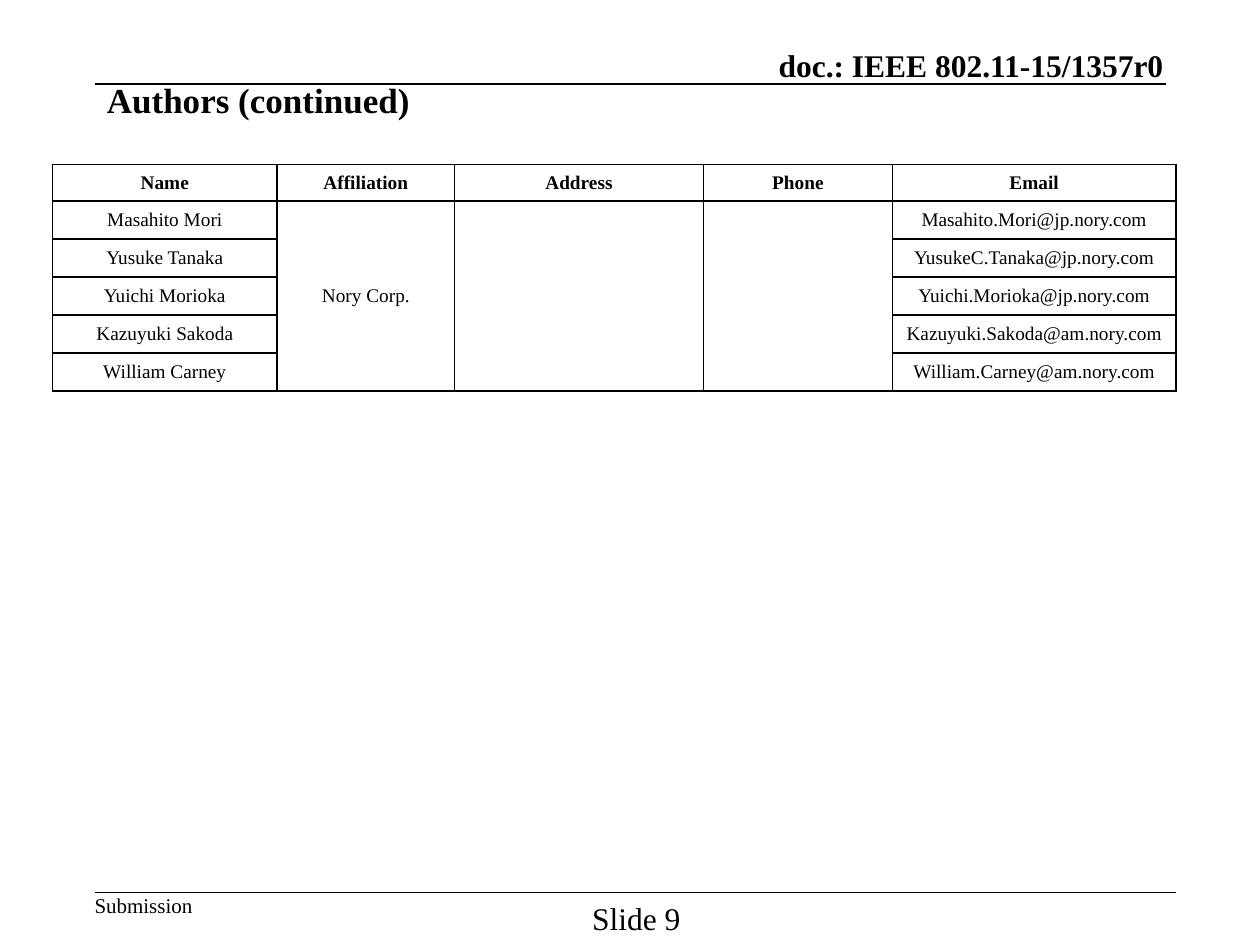
from lxml import etree
from pptx import Presentation
from pptx.dml.color import RGBColor
from pptx.enum.shapes import MSO_CONNECTOR
from pptx.enum.text import MSO_ANCHOR, PP_ALIGN
from pptx.oxml.ns import qn
from pptx.util import Pt

BLACK = RGBColor(0, 0, 0)
WHITE = RGBColor(255, 255, 255)
FONT = "Times New Roman"
LEFT, CENTER, RIGHT = PP_ALIGN.LEFT, PP_ALIGN.CENTER, PP_ALIGN.RIGHT
TOP, MIDDLE, BOTTOM = MSO_ANCHOR.TOP, MSO_ANCHOR.MIDDLE, MSO_ANCHOR.BOTTOM
STRAIGHT = MSO_CONNECTOR.STRAIGHT


def write_text(text_frame, text, size, bold=False, align=LEFT):
    paragraph = text_frame.paragraphs[0]
    paragraph.alignment = align
    run = paragraph.add_run()
    run.text = text
    run.font.name = FONT
    run.font.size = Pt(size)
    run.font.bold = bold
    run.font.color.rgb = BLACK


presentation = Presentation()
presentation.slide_width, presentation.slide_height = Pt(720), Pt(540)
slide = presentation.slides.add_slide(presentation.slide_layouts[6])

labels = [
    ("doc.: IEEE 802.11-15/1357r0", (406.4, 26.4, 258.5, 21.6), 18, True, RIGHT, BOTTOM, (0, 0), False),
    ("Submission", (54, 510, 56.2, 14.4), 12, False, LEFT, TOP, (0, 0), False),
    ("Slide 9", (333.6, 513.8, 60, 21.6), 18, False, CENTER, TOP, (0, 0), False),
    ("Authors (continued)", (54, 47.8, 612, 18), 20, True, LEFT, MIDDLE, (7.2, 3.6), True),
]
for text, box, size, bold, align, anchor, (side, edge), wrap in labels:
    text_frame = slide.shapes.add_textbox(*map(Pt, box)).text_frame
    text_frame.word_wrap = wrap
    text_frame.vertical_anchor = anchor
    text_frame.margin_left = text_frame.margin_right = Pt(side)
    text_frame.margin_top = text_frame.margin_bottom = Pt(edge)
    write_text(text_frame, text, size, bold, align)

for right, y in [(666, 48), (672, 510)]:
    rule = slide.shapes.add_connector(STRAIGHT, Pt(54), Pt(y), Pt(right), Pt(y))
    rule.line.color.rgb = BLACK
    rule.line.width = Pt(1)
    etree.SubElement(rule.element.spPr, qn("a:effectLst"))

headings = ["Name", "Affiliation", "Address", "Phone", "Email"]
authors = [
    ("Masahito Mori", "Masahito.Mori@jp.nory.com"),
    ("Yusuke Tanaka", "YusukeC.Tanaka@jp.nory.com"),
    ("Yuichi Morioka", "Yuichi.Morioka@jp.nory.com"),
    ("Kazuyuki Sakoda", "Kazuyuki.Sakoda@am.nory.com"),
    ("William Carney", "William.Carney@am.nory.com"),
]
rows = [headings] + [[name, "", "", "", email] for name, email in authors]
rows[1][1] = "Nory Corp."
column_widths = [128.4, 101.4, 142.2, 108, 162]
row_heights = [21] + [21.7] * len(authors)

table = slide.shapes.add_table(
    len(rows), len(headings), Pt(30), Pt(93.9), Pt(sum(column_widths)), Pt(sum(row_heights))
).table
for column, width in zip(table.columns, column_widths):
    column.width = Pt(width)
for row, height in zip(table.rows, row_heights):
    row.height = Pt(height)

for row_index, row in enumerate(rows):
    is_heading = row_index == 0
    for column_index, text in enumerate(row):
        cell = table.cell(row_index, column_index)
        cell.vertical_anchor = MIDDLE
        if not is_heading:
            cell.margin_left = cell.margin_right = Pt(5)
            cell.margin_top = cell.margin_bottom = 0
        cell_properties = cell._tc.get_or_add_tcPr()
        for side in ("a:lnL", "a:lnR", "a:lnT", "a:lnB"):
            border = etree.SubElement(cell_properties, qn(side), w=str(Pt(1)))
            border_fill = etree.SubElement(border, qn("a:solidFill"))
            etree.SubElement(border_fill, qn("a:srgbClr"), val=str(BLACK))
        cell.fill.solid()
        cell.fill.fore_color.rgb = WHITE
        if text:
            write_text(cell.text_frame, text, 11, is_heading, CENTER)

for column_index in (1, 2, 3):
    table.cell(1, column_index).merge(table.cell(len(authors), column_index))

presentation.save("out.pptx")
